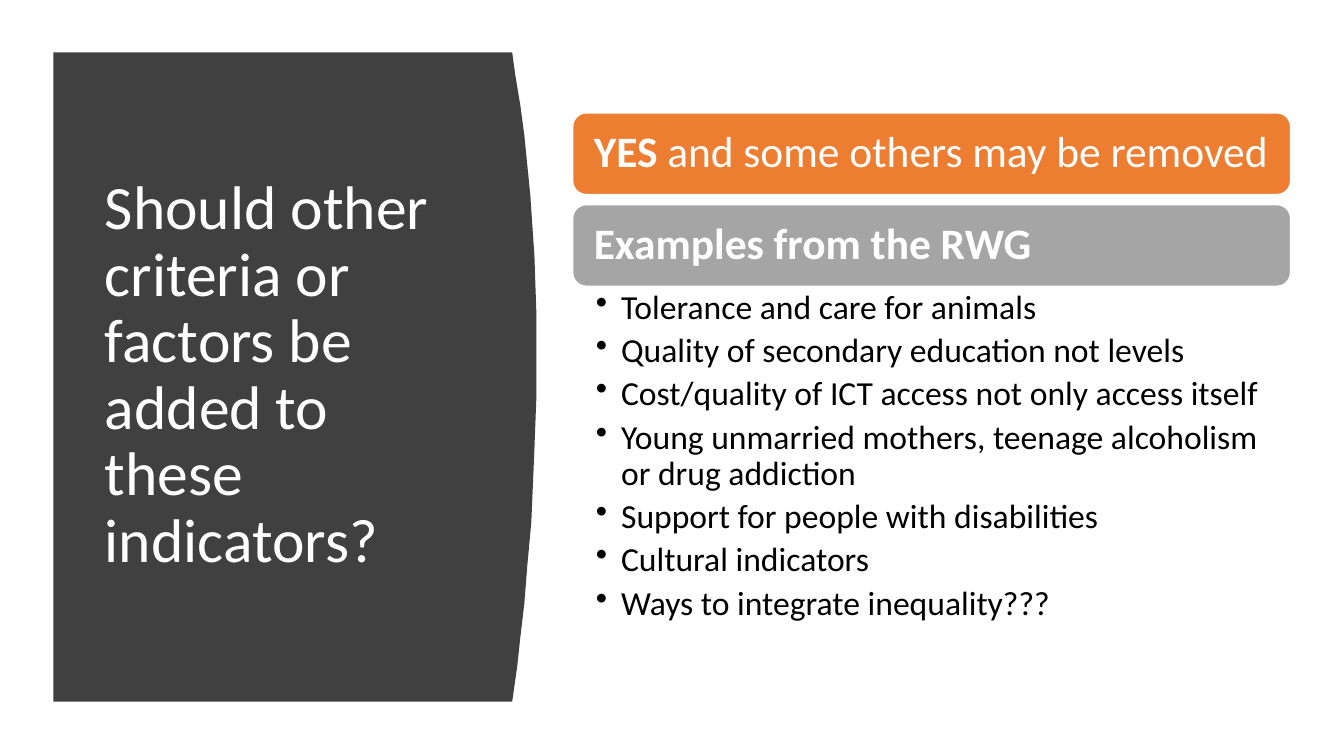
from lxml import etree
from pptx import Presentation
from pptx.dml.color import RGBColor
from pptx.enum.shapes import MSO_SHAPE
from pptx.enum.text import MSO_ANCHOR, MSO_AUTO_SIZE, PP_ALIGN
from pptx.oxml.ns import qn
from pptx.util import Pt

PX = 9144  # 100 px to the inch
ROUNDED = MSO_SHAPE.ROUNDED_RECTANGLE
MIDDLE = MSO_ANCHOR.MIDDLE
LEFT = PP_ALIGN.LEFT
NO_AUTOFIT = MSO_AUTO_SIZE.NONE


def color(hex_string):
    return RGBColor.from_string(hex_string)


def style(paragraph, size, hex_string):
    paragraph.alignment = LEFT
    paragraph.line_spacing = 0.9
    paragraph.font.name = "Calibri"
    paragraph.font.size = Pt(size)
    paragraph.font.color.rgb = color(hex_string)


prs = Presentation()
prs.slide_width = 1333 * PX
prs.slide_height = 750 * PX
slide = prs.slides.add_slide(prs.slide_layouts[5])
shapes = slide.shapes

# Dark panel with a bowed right edge, behind the title
bowed_edge = [
    (508, 52), (511, 74), (516, 104), (520, 134), (523, 164), (526, 194),
    (528, 224), (530, 253), (531, 282), (532, 311), (532, 339), (532, 367),
    (532, 394), (531, 420), (530, 446), (529, 471), (527, 518), (523, 561),
    (520, 599), (516, 633), (513, 661), (510, 682), (508, 696),
]
outline = shapes.build_freeform(53, 52, scale=PX)
outline.add_line_segments(bowed_edge + [(53, 696)], close=True)
panel = outline.convert_to_shape()
panel.shadow.inherit = False
panel.fill.solid()
panel.fill.fore_color.rgb = color("404040")
panel.line.fill.background()
shapes._spTree.insert(2, panel._element)

question = shapes.title
question.left, question.top = 94 * PX, 111 * PX
question.width, question.height = 374 * PX, 524 * PX
question.text_frame.text = "Should other criteria or factors be added to these indicators?"
question.text_frame.word_wrap = True
question.text_frame.auto_size = NO_AUTOFIT
question.text_frame.vertical_anchor = MIDDLE
style(question.text_frame.paragraphs[0], 44, "FFFFFF")

# Answer bars: top, fill, bold text, regular text
bars = [
    (112, "ED7D31", "YES ", "and some others may be removed"),
    (203, "A5A5A5", "Examples from the RWG", ""),
]
for top, fill, strong, regular in bars:
    bar = shapes.add_shape(ROUNDED, 568 * PX, top * PX, 712 * PX, 81 * PX)
    bar.shadow.inherit = False
    bar.fill.solid()
    bar.fill.fore_color.rgb = color(fill)
    bar.line.color.rgb = color("FFFFFF")
    bar.line.width = Pt(1)
    frame = bar.text_frame
    frame.word_wrap = True
    frame.vertical_anchor = MIDDLE
    frame.margin_left = frame.margin_right = 17 * PX
    heading = frame.paragraphs[0]
    style(heading, 31, "FFFFFF")
    strong_run = heading.add_run()
    strong_run.text = strong
    strong_run.font.bold = True
    if regular:
        heading.add_run().text = regular

examples = [
    "Tolerance and care for animals",
    "Quality of secondary education not levels",
    "Cost/quality of ICT access not only access itself",
    "Young unmarried mothers, teenage alcoholism or drug addiction",
    "Support for people with disabilities",
    "Cultural indicators",
    "Ways to integrate inequality???",
]
example_list = shapes.add_textbox(568 * PX, 284 * PX, 712 * PX, 351 * PX).text_frame
example_list.word_wrap = True
example_list.margin_left, example_list.margin_right = 23 * PX, 24 * PX
example_list.margin_top = example_list.margin_bottom = 4 * PX
example_list.text = "\n".join(examples)
for example in example_list.paragraphs:
    style(example, 24, "000000")
    example.space_after = Pt(5)
    properties = example._p.get_or_add_pPr()
    properties.set("marL", str(25 * PX))
    properties.set("indent", str(-25 * PX))
    bullet = etree.Element(qn("a:buChar"), char="•")
    properties.find(qn("a:spcAft")).addnext(bullet)

prs.save("out.pptx")
